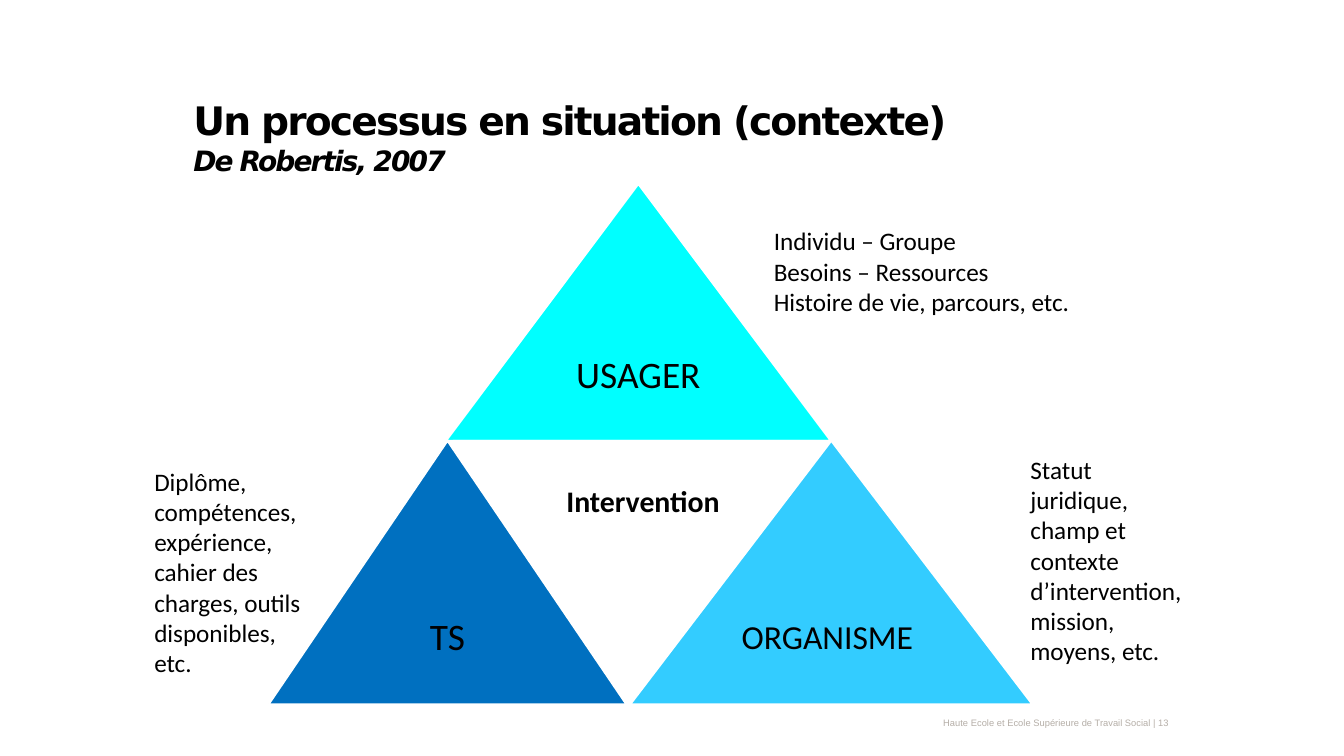
from dataclasses import dataclass

from pptx import Presentation
from pptx.dml.color import RGBColor
from pptx.enum.shapes import MSO_SHAPE
from pptx.enum.text import MSO_ANCHOR, PP_ALIGN
from pptx.util import Pt

TRIANGLE = MSO_SHAPE.ISOSCELES_TRIANGLE
TOP, MIDDLE = MSO_ANCHOR.TOP, MSO_ANCHOR.MIDDLE
LEFT, CENTER, RIGHT = PP_ALIGN.LEFT, PP_ALIGN.CENTER, PP_ALIGN.RIGHT


@dataclass(frozen=True)
class Theme:
    ink: str = "000000"
    paper: str = "FFFFFF"
    muted: str = "B5AEA7"
    user: str = "00FFFF"
    worker: str = "0070C0"
    organisation: str = "33CCFF"
    title_font: str = "DejaVu Sans"
    body_font: str = "Calibri"
    footer_font: str = "Arial"
    title_size: float = 21
    subtitle_size: float = 15
    label_size: float = 20
    wide_label_size: float = 18
    center_size: float = 16
    note_size: float = 13.5
    footer_size: float = 5


class SlideBuilder:
    def __init__(self, slide, theme):
        self.slide = slide
        self.theme = theme
        self.diagram = None

    def apply(self, target, values):
        for name, value in values.items():
            setattr(target, name, value)

    def run(self, paragraph, text, size, font=None, color=None, tracking=0, **values):
        run = paragraph.add_run()
        run.text = text
        font = font or self.theme.body_font
        self.apply(run.font, {"name": font, "size": Pt(size), **values})
        run.font.color.rgb = RGBColor.from_string(color or self.theme.ink)
        if tracking:
            run.font._element.set("spc", str(tracking * 100))

    def box(self, shapes, bounds, anchor=TOP, inset=None):
        frame = shapes.add_textbox(*map(Pt, bounds)).text_frame
        self.apply(frame, {"word_wrap": True, "vertical_anchor": anchor})
        if inset is not None:
            sides = ("left", "top", "right", "bottom")
            self.apply(frame, {f"margin_{side}": Pt(inset) for side in sides})
        return frame

    def title(self, bounds, heading, source):
        paragraph = self.box(self.slide.shapes, bounds).paragraphs[0]
        style = {"font": self.theme.title_font, "bold": True, "tracking": -1}
        self.run(paragraph, heading, self.theme.title_size, **style)
        paragraph.add_line_break()
        self.run(paragraph, source, self.theme.subtitle_size, italic=True, **style)

    def start_diagram(self):
        self.diagram = self.slide.shapes.add_group_shape()

    def triangle(self, bounds, text, size, fill=None, bold=False):
        left, top, width, height = bounds
        shapes = self.diagram.shapes
        shape = shapes.add_shape(TRIANGLE, *map(Pt, bounds))
        shape.shadow.inherit = False
        shape.line.color.rgb = RGBColor.from_string(self.theme.paper)
        shape.line.width = Pt(1)
        label_top = top
        if fill:
            shape.fill.solid()
            shape.fill.fore_color.rgb = RGBColor.from_string(fill)
            label_top += height / 2
        else:
            shape.fill.background()
            shape.rotation = 180
        label = (left + width / 4, label_top, width / 2, height / 2)
        paragraph = self.box(shapes, label, MIDDLE, inset=5).paragraphs[0]
        self.apply(paragraph, {"alignment": CENTER, "line_spacing": 0.9})
        self.run(paragraph, text, size, bold=bold)

    def note(self, bounds, lines):
        frame = self.box(self.slide.shapes, bounds)
        for index, line in enumerate(lines):
            paragraph = frame.add_paragraph() if index else frame.paragraphs[0]
            paragraph.alignment = LEFT
            self.run(paragraph, line, self.theme.note_size)

    def footer(self, bounds, text):
        paragraph = self.box(self.slide.shapes, bounds, MIDDLE).paragraphs[0]
        self.apply(paragraph, {"alignment": RIGHT, "line_spacing": Pt(7)})
        theme = self.theme
        self.run(paragraph, text, theme.footer_size, theme.footer_font, theme.muted)


def main():
    presentation = Presentation()
    presentation.slide_width, presentation.slide_height = Pt(720), Pt(405)
    theme = Theme()
    slide = presentation.slides.add_slide(presentation.slide_layouts[6])
    builder = SlideBuilder(slide, theme)

    builder.footer((455.8, 383, 177.8, 7.2),
                   "Haute Ecole et Ecole Supérieure de Travail Social | 13")
    builder.title((96.5, 48.2, 486, 67.7),
                  "Un processus en situation (contexte)", "De Robertis, 2007")

    builder.start_diagram()
    middle = 236.2
    builder.triangle((239, 98.6, 206, 137.5), "USAGER", theme.label_size, theme.user)
    builder.triangle((144, middle, 191.5, 141.1), "TS", theme.label_size, theme.worker)
    builder.triangle((242.6, middle, 207.4, 132.5), "Intervention ",
                     theme.center_size, bold=True)
    builder.triangle((337.7, middle, 215.3, 141.1), "ORGANISME ",
                     theme.wide_label_size, theme.organisation)

    builder.note((407.5, 117.4, 187.2, 56.2),
                 ["Individu – Groupe", "Besoins – Ressources",
                  "Histoire de vie, parcours, etc."])
    builder.note((545, 239.8, 98.6, 121.7),
                 ["Statut juridique, champ et contexte d’intervention, "
                  "mission, moyens, etc."])
    builder.note((75.6, 246.2, 97.9, 121.7),
                 ["Diplôme, compétences, expérience, cahier des charges, "
                  "outils disponibles, etc."])
    presentation.save("out.pptx")


if __name__ == "__main__":
    main()
